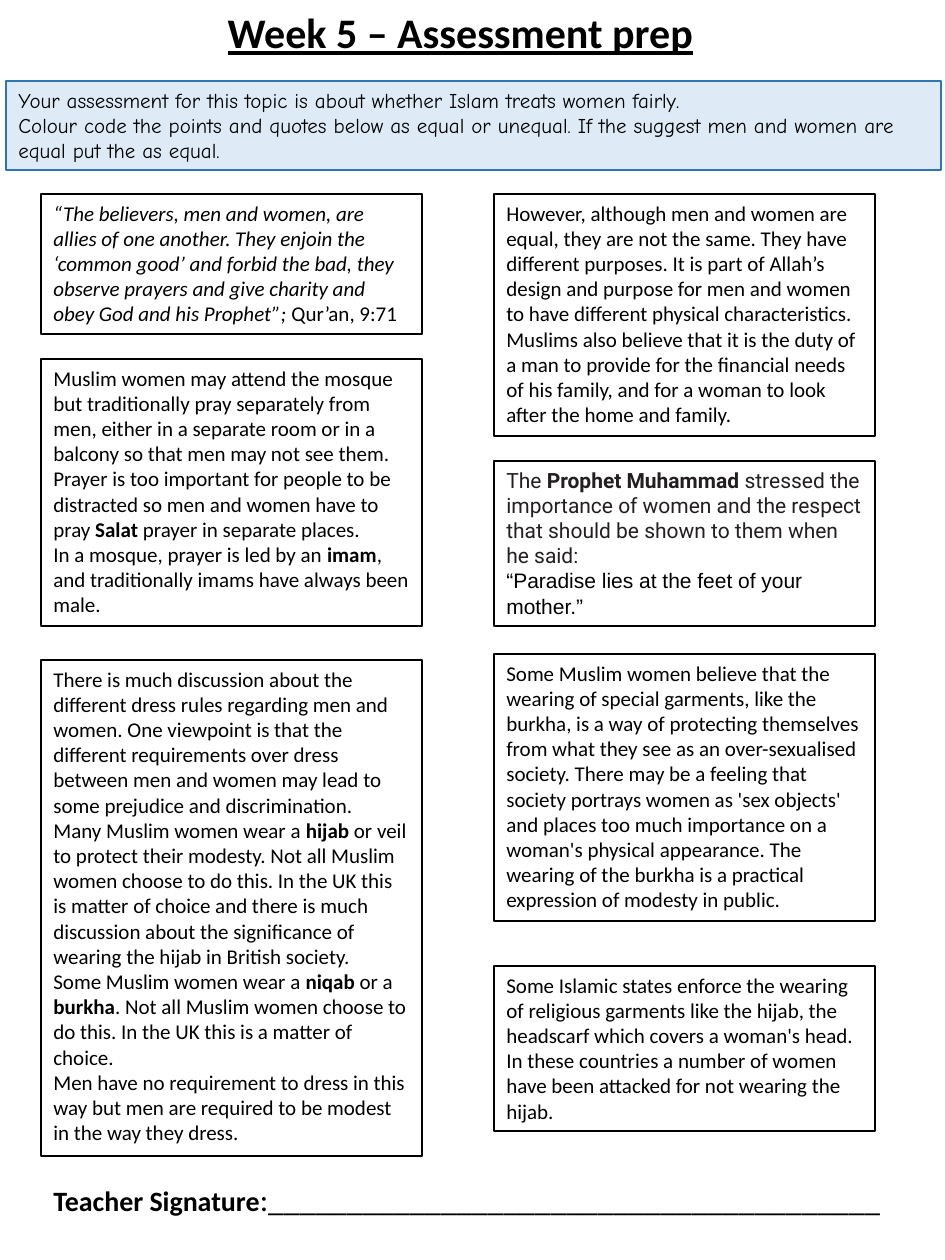
from pptx import Presentation
from pptx import util as u
from pptx.dml.color import RGBColor
from pptx.enum import shapes, text

PX = 914400 / 126
COLOURS = {"black": "000000", "white": "FFFFFF", "charcoal": "231F20",
           "pale blue": "DEEBF7", "blue": "2E75B6"}
LEFT, RIGHT, COLUMN_W = 41, 494, 381

# A paragraph is a list of runs; a run is plain text or (text, style).
BOLD, ITALIC = {"bold": True}, {"italic": True}
ROBOTO = {"font": "Roboto", "colour": "charcoal"}

BANNER = [
    ["Your assessment for this topic is about whether Islam treats women fairly."],
    ["Colour code the points and quotes below as equal or unequal. If the suggest "
     "men and women are equal put the as equal."],
]

# (left, top, height, paragraphs)
CARDS = [
    (LEFT, 194, 140, [
        [("“The believers, men and women, are allies of one another. They enjoin the "
          "‘common good’ and forbid the bad, they observe prayers and give charity "
          "and obey God and his Prophet”;", ITALIC), " Qur’an, 9:71"],
    ]),
    (RIGHT, 194, 242, [
        ["However, although men and women are equal, they are not the same. They have "
         "different purposes. It is part of Allah’s design and purpose for men and "
         "women to have different physical characteristics."],
        ["Muslims also believe that it is the duty of a man to provide for the "
         "financial needs of his family, and for a woman to look after the home and "
         "family."],
    ]),
    (LEFT, 359, 267, [
        ["Muslim women may attend the mosque but traditionally pray separately from "
         "men, either in a separate room or in a balcony so that men may not see them. "
         "Prayer is too important for people to be distracted so men and women have to "
         "pray ", ("Salat", BOLD), " prayer in separate places."],
        ["In a mosque, prayer is led by an ", ("imam", BOLD),
         ", and traditionally imams have always been male."],
    ]),
    (RIGHT, 461, 165, [
        [("The ", ROBOTO), ("Prophet Muhammad", ROBOTO | BOLD),
         (" stressed the importance of women and the respect that should be shown to "
          "them when he said:", ROBOTO)],
        [("“Paradise lies at the feet of your mother.”", {"font": "Arial"})],
    ]),
    (LEFT, 660, 496, [
        ["There is much discussion about the different dress rules regarding men and "
         "women. One viewpoint is that the different requirements over dress between "
         "men and women may lead to some prejudice and discrimination."],
        ["Many Muslim women wear a ", ("hijab", BOLD),
         " or veil to protect their modesty. Not all Muslim women choose to do this. "
         "In the UK this is matter of choice and there is much discussion about the "
         "significance of wearing the hijab in British society."],
        ["Some Muslim women wear a ", ("niqab", BOLD), " or a ", ("burkha", BOLD),
         ". Not all Muslim women choose to do this. In the UK this is a matter of "
         "choice."],
        ["Men have no requirement to dress in this way but men are required to be "
         "modest in the way they dress."],
    ]),
    (RIGHT, 654, 267, [
        ["Some Muslim women believe that the wearing of special garments, like the "
         "burkha, is a way of protecting themselves from what they see as an "
         "over-sexualised society. There may be a feeling that society portrays women "
         "as 'sex objects' and places too much importance on a woman's physical "
         "appearance. The wearing of the burkha is a practical expression of modesty "
         "in public."],
    ]),
    (RIGHT, 966, 165, [
        ["Some Islamic states enforce the wearing of religious garments like the "
         "hijab, the headscarf which covers a woman's head. In these countries a "
         "number of women have been attacked for not wearing the hijab."],
    ]),
]


def px(n):
    return u.Emu(round(n * PX))


def rgb(name):
    return RGBColor.from_string(COLOURS[name])


def add_run(p, content, font="Calibri", size=12, colour="black",
            bold=False, italic=False, underline=False):
    r = p.add_run()
    r.text = content
    f = r.font
    f.name, f.size, f.bold, f.italic, f.underline = font, u.Pt(size), bold, italic, underline
    f.color.rgb = rgb(colour)


def write(sp, paragraphs, **base):
    """Fill a shape with paragraphs; each run's style overrides base."""
    tf = sp.text_frame
    tf.word_wrap = True
    tf.auto_size = text.MSO_AUTO_SIZE.SHAPE_TO_FIT_TEXT
    tf.vertical_anchor = text.MSO_ANCHOR.TOP
    for i, runs in enumerate(paragraphs):
        p = tf.add_paragraph() if i else tf.paragraphs[0]
        p.alignment = text.PP_ALIGN.LEFT
        p.line_spacing = 1.0
        p.space_before = u.Pt(0)
        for run in runs:
            content, style = (run, {}) if isinstance(run, str) else run
            add_run(p, content, **(base | style))


def add_title(s, x, y, w, h, title):
    sp = s.shapes.title
    sp.left, sp.top, sp.width, sp.height = map(px, (x, y, w, h))
    write(sp, [[title]], size=24, bold=True, underline=True)


def add_box(s, x, y, w, h, paragraphs, fill="white", line="black", weight=1, **base):
    sp = s.shapes.add_shape(shapes.MSO_SHAPE.RECTANGLE, *map(px, (x, y, w, h)))
    sp.shadow.inherit = False
    sp.fill.solid()
    sp.fill.fore_color.rgb = rgb(fill)
    sp.line.color.rgb = rgb(line)
    sp.line.width = u.Pt(weight)
    write(sp, paragraphs, **base)


def add_signature(s, x, y, w, h):
    sp = s.shapes.add_textbox(*map(px, (x, y, w, h)))
    write(sp, [[("Teacher Signature", {"size": 16, "bold": True}), ":" + "_" * 39]], size=18)


def main():
    prs = Presentation()
    prs.slide_width, prs.slide_height = px(945), px(1260)
    s = prs.slides.add_slide(prs.slide_layouts[5])
    add_title(s, 215, 0, 515, 63, "Week 5 – Assessment prep")
    add_box(s, 6, 81, 935, 89, BANNER, fill="pale blue", line="blue", weight=0.75,
            font="Comic Neue")
    add_signature(s, LEFT, 1174, 903, 50)
    for x, y, h, paragraphs in CARDS:
        add_box(s, x, y, COLUMN_W, h, paragraphs)
    prs.save("out.pptx")


if __name__ == "__main__":
    main()
